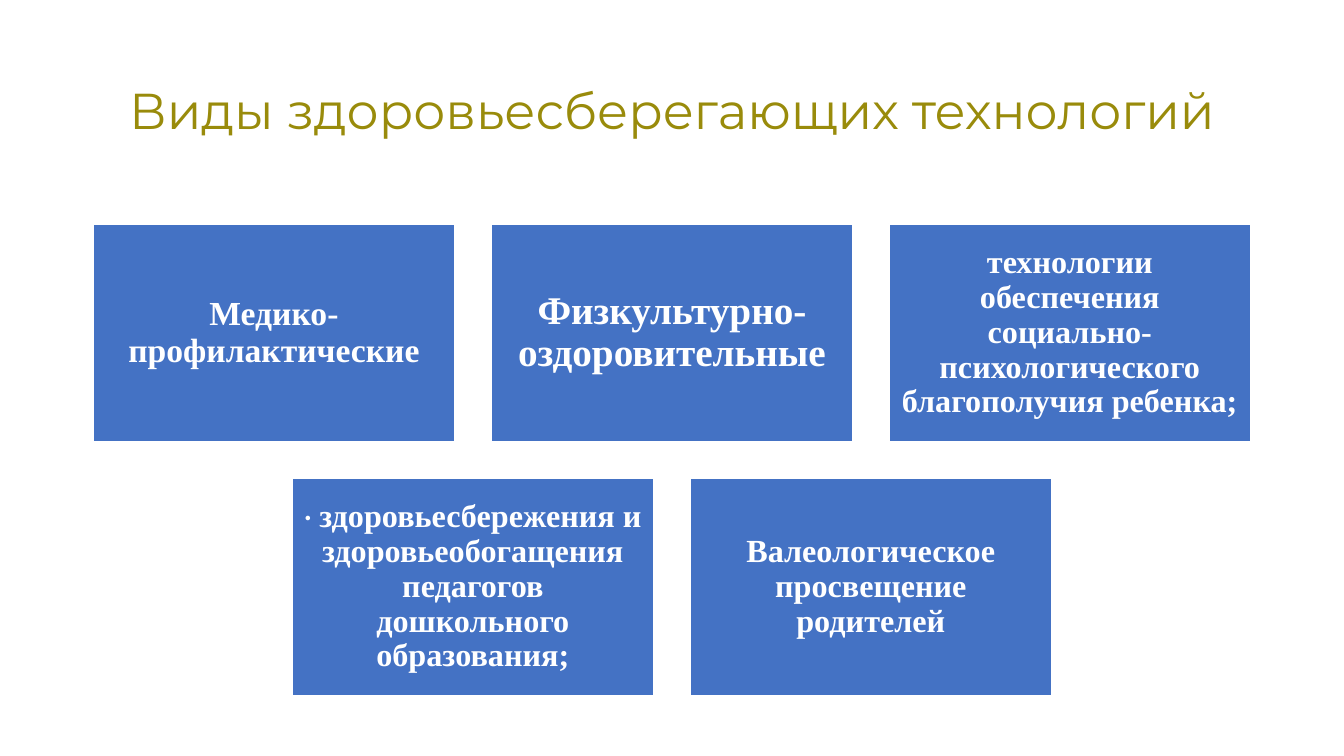
from pptx import Presentation
from pptx.dml.color import RGBColor
from pptx.enum.shapes import MSO_SHAPE
from pptx.enum.text import MSO_ANCHOR, MSO_AUTO_SIZE, PP_ALIGN
from pptx.util import Emu, Pt

PX = 914400 / 100.8
COLORS = {"title": "998B0B", "card": "4472C4", "white": "FFFFFF"}
SERIF = "Times New Roman"

CARD_WIDTH, CARD_HEIGHT, GAP = 362, 218, 36

# Each card: size, inset in px, runs of (text, font, bold)
CARD_ROWS = [
    [
        (24, 10, [("Медико-профилактические", SERIF, True)]),
        (28, 12, [("Физкультурно-оздоровительные", SERIF, True)]),
        (23, 10, [("технологии обеспечения социально-психологического "
                   "благополучия ребенка;", SERIF, True)]),
    ],
    [
        (23, 10, [("· ", "Calibri", False),
                  ("здоровьесбережения и здоровьеобогащения педагогов "
                   "дошкольного образования;", SERIF, True)]),
        (23, 10, [("Валеологическое просвещение родителей", SERIF, True)]),
    ],
]


def px(length):
    return Emu(round(length * PX))


def color(name):
    return RGBColor.from_string(COLORS[name])


def write_text(shape, runs, *, size, color_name, inset=None):
    """Fill a shape with one centred paragraph of (text, font, bold) runs."""
    frame = shape.text_frame
    frame.word_wrap = True
    frame.auto_size = MSO_AUTO_SIZE.NONE
    frame.vertical_anchor = MSO_ANCHOR.MIDDLE
    if inset is not None:
        frame.margin_left = frame.margin_right = px(inset)
        frame.margin_top = frame.margin_bottom = px(inset)
    paragraph = frame.paragraphs[0]
    paragraph.alignment = PP_ALIGN.CENTER
    paragraph.line_spacing = 0.9
    for text, font_name, bold in runs:
        run = paragraph.add_run()
        run.text = text
        run.font.name = font_name
        run.font.size = Pt(size)
        run.font.bold = bold
        run.font.color.rgb = color(color_name)


def add_title(slide, left, top, width, height):
    title = slide.shapes.title
    title.left, title.top = px(left), px(top)
    title.width, title.height = px(width), px(height)
    write_text(title, [("Виды здоровьесберегающих технологий", "Montserrat", False)],
               size=36, color_name="title")


def add_card(slide, left, top, size, inset, runs):
    card = slide.shapes.add_shape(MSO_SHAPE.RECTANGLE, px(left), px(top),
                                  px(CARD_WIDTH), px(CARD_HEIGHT))
    card.shadow.inherit = False
    card.fill.solid()
    card.fill.fore_color.rgb = color("card")
    card.line.color.rgb = color("white")
    card.line.width = Pt(1)
    write_text(card, runs, size=size, color_name="white", inset=inset)


def add_card_grid(slide, left, top, width):
    """Stack the rows of cards, each row centred in the given width."""
    for row_index, row in enumerate(CARD_ROWS):
        row_width = len(row) * (CARD_WIDTH + GAP) - GAP
        row_left = left + (width - row_width) / 2
        row_top = top + row_index * (CARD_HEIGHT + GAP)
        for column, (size, inset, runs) in enumerate(row):
            add_card(slide, row_left + column * (CARD_WIDTH + GAP), row_top,
                     size, inset, runs)


def main():
    presentation = Presentation()
    presentation.slide_width, presentation.slide_height = px(1344), px(756)
    slide = presentation.slides.add_slide(presentation.slide_layouts.get_by_name("Title Only"))
    add_title(slide, 92, 40, 1160, 146)
    add_card_grid(slide, 92, 224, 1160)
    presentation.save("out.pptx")


if __name__ == "__main__":
    main()
